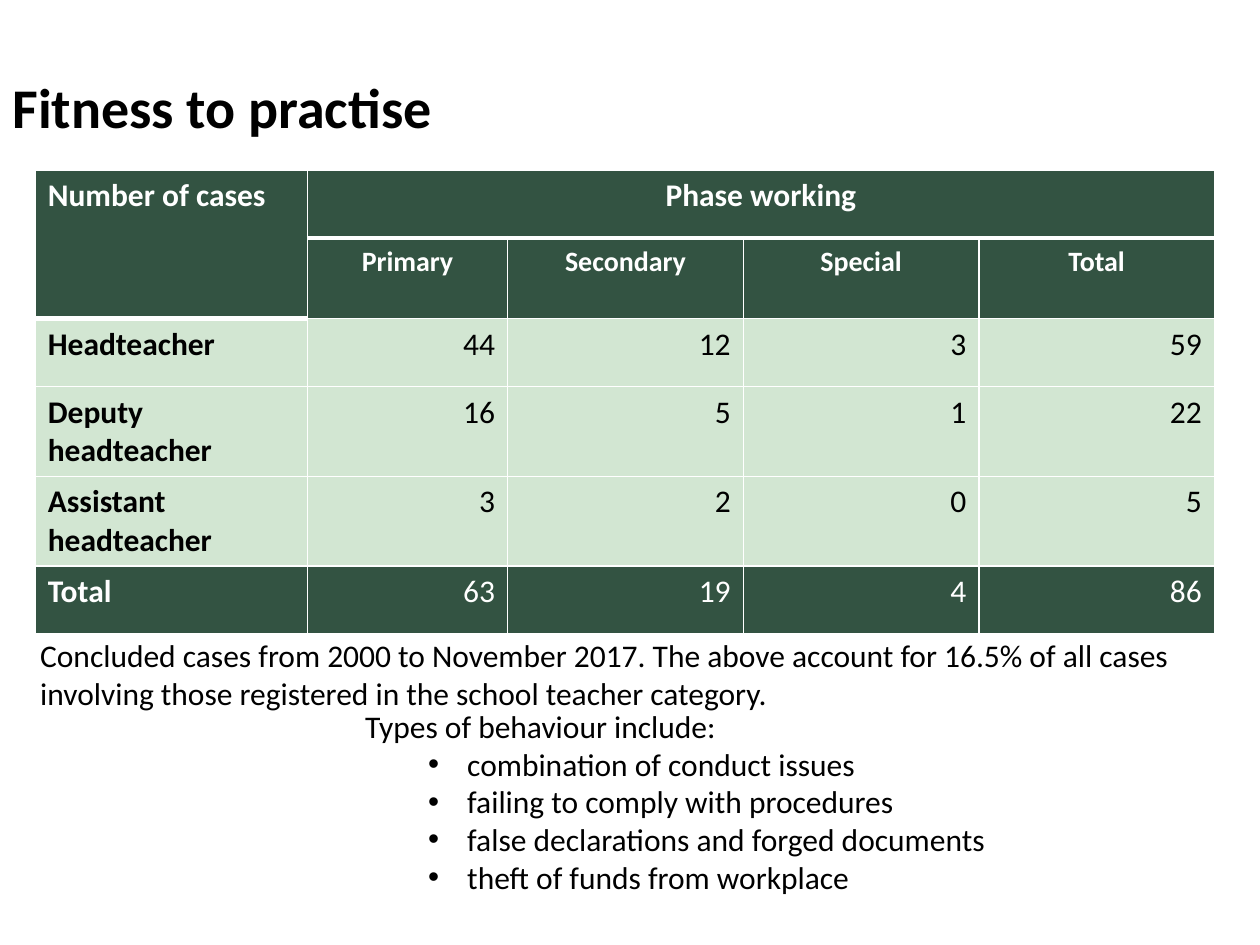
from lxml import etree
from pptx import Presentation
from pptx.dml.color import RGBColor
from pptx.enum.text import MSO_ANCHOR, MSO_AUTO_SIZE, PP_ALIGN
from pptx.oxml.ns import qn
from pptx.util import Inches, Pt

LEFT, CENTER, RIGHT = PP_ALIGN.LEFT, PP_ALIGN.CENTER, PP_ALIGN.RIGHT
MIDDLE = MSO_ANCHOR.MIDDLE
GROW = MSO_AUTO_SIZE.SHAPE_TO_FIT_TEXT

BLACK = RGBColor(0x00, 0x00, 0x00)
WHITE = RGBColor(0xFF, 0xFF, 0xFF)
DARK_GREEN = RGBColor(0x33, 0x53, 0x42)
PALE_GREEN = RGBColor(0xD2, 0xE6, 0xD2)

COLUMN_WIDTHS = [2.16, 1.59, 1.87, 1.87, 1.87]
ROW_HEIGHTS = [0.54, 0.64, 0.54, 0.54, 0.54, 0.54]
CASES = [
    ["Number of cases", "Phase working", "", "", ""],
    ["", "Primary", "Secondary", "Special", "Total"],
    ["Headteacher", "44", "12", "3", "59"],
    ["Deputy headteacher", "16", "5", "1", "22"],
    ["Assistant headteacher", "3", "2", "0", "5"],
    ["Total", "63", "19", "4", "86"],
]
HEADER_ROWS = 2
NOTE = (
    "Concluded cases from 2000 to November 2017. The above account for 16.5% "
    "of all cases involving those registered in the school teacher category."
)
BEHAVIOURS = [
    "combination of conduct issues",
    "failing to comply with procedures",
    "false declarations and forged documents",
    "theft of funds from workplace",
]


def write(p, text, size=18, color=BLACK, bold=False, align=LEFT):
    p.alignment = align
    r = p.add_run()
    r.text = text
    r.font.color.rgb = color
    for name, value in {"name": "Calibri", "size": Pt(size), "bold": bold}.items():
        setattr(r.font, name, value)


def add_bullet(p, indent, hanging):
    pPr = p._p.get_or_add_pPr()
    pPr.set("marL", str(Inches(indent)))
    pPr.set("indent", str(-Inches(hanging)))
    etree.SubElement(pPr, qn("a:buFont"), typeface="Arial")
    etree.SubElement(pPr, qn("a:buChar"), char="•")


def set_title(s, text):
    title = s.shapes.title
    box = {"left": 0, "top": 0.36, "width": 8.03, "height": 1.25}
    for name, value in box.items():
        setattr(title, name, Inches(value))
    tf = title.text_frame
    tf.vertical_anchor = MIDDLE
    tf.margin_bottom = Inches(0.34)
    write(tf.paragraphs[0], text, size=32, bold=True)


def add_text(s, left, top, width, height, text, bullets=()):
    box = s.shapes.add_textbox(*map(Inches, (left, top, width, height)))
    tf = box.text_frame
    tf.word_wrap = True
    tf.auto_size = GROW
    write(tf.paragraphs[0], text)
    for bullet in bullets:
        p = tf.add_paragraph()
        add_bullet(p, 0.81, 0.31)
        write(p, bullet)


def set_borders(cell, widths):
    tcPr = cell._tc.get_or_add_tcPr()
    for position, (side, width) in enumerate(widths.items()):
        line = etree.Element(qn(f"a:{side}"), w=str(Pt(width)))
        fill = etree.SubElement(line, qn("a:solidFill"))
        etree.SubElement(fill, qn("a:srgbClr"), val=str(WHITE))
        tcPr.insert(position, line)


def format_cell(cell, row, col, text):
    header = row < HEADER_ROWS
    dark = header or row == len(CASES) - 1
    cell.fill.solid()
    cell.fill.fore_color.rgb = DARK_GREEN if dark else PALE_GREEN
    top = 3 if row == 1 and col or row == 2 and not col else 1
    bottom = 3 if row == 0 or row == 1 and not col else 1
    set_borders(cell, {"lnL": 1, "lnR": 1, "lnT": top, "lnB": bottom})
    if text:
        write(
            cell.text_frame.paragraphs[0],
            text,
            size=16 if row == 1 else 18,
            color=WHITE if dark else BLACK,
            bold=header or col == 0,
            align=LEFT if col == 0 else CENTER if header else RIGHT,
        )


def add_cases_table(s):
    frame = s.shapes.add_table(
        len(CASES), len(COLUMN_WIDTHS), Inches(0.28), Inches(1.35),
        Inches(sum(COLUMN_WIDTHS)), Inches(sum(ROW_HEIGHTS)),
    )
    table = frame.table
    for column, width in zip(table.columns, COLUMN_WIDTHS):
        column.width = Inches(width)
    for row, height in zip(table.rows, ROW_HEIGHTS):
        row.height = Inches(height)
    table.cell(0, 0).merge(table.cell(1, 0))
    table.cell(0, 1).merge(table.cell(0, 4))
    for row, texts in enumerate(CASES):
        for col, text in enumerate(texts):
            format_cell(table.cell(row, col), row, col, text)


def main():
    prs = Presentation()
    prs.slide_width, prs.slide_height = Inches(10), Inches(7.5)
    s = prs.slides.add_slide(prs.slide_layouts[5])
    set_title(s, "Fitness to practise")
    add_cases_table(s)
    add_text(s, 2.8, 5.56, 7.09, 1.62, "Types of behaviour include:", BEHAVIOURS)
    add_text(s, 0.22, 5, 9.49, 0.71, NOTE)
    prs.save("out.pptx")


if __name__ == "__main__":
    main()
